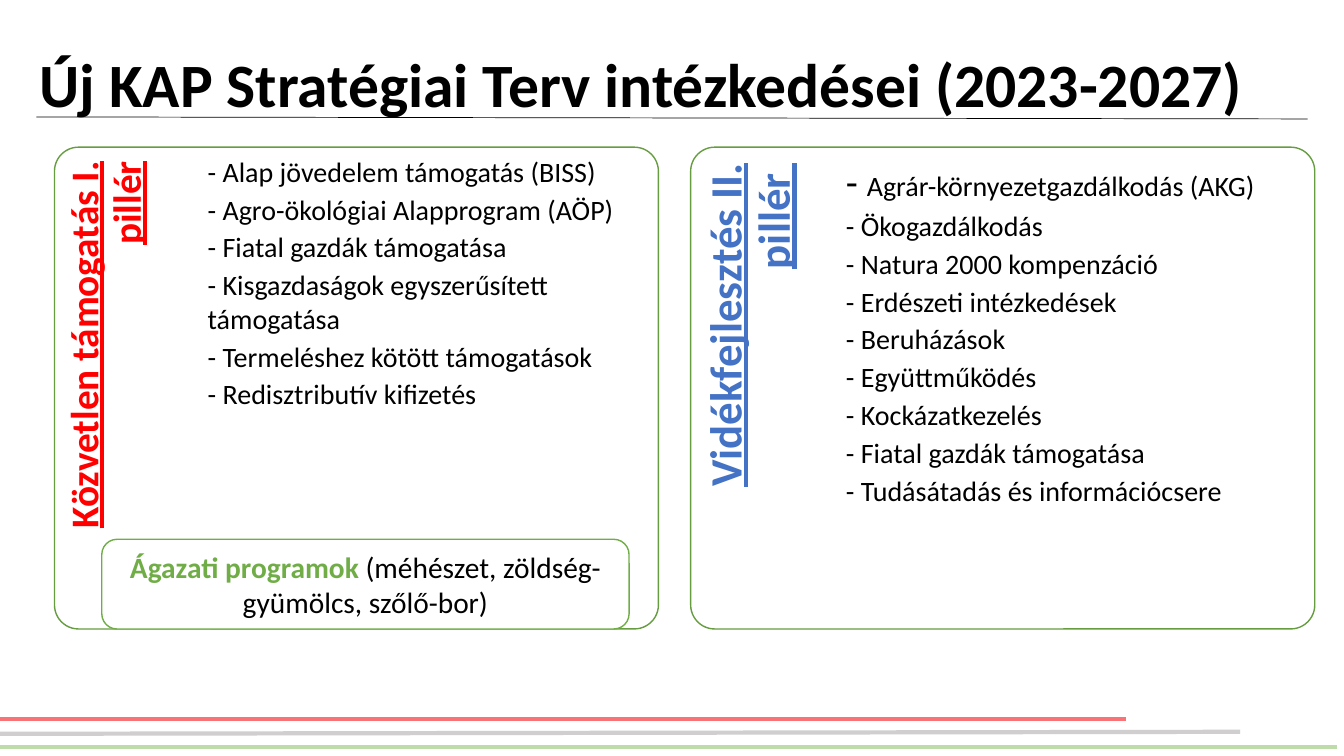
from dataclasses import dataclass

from lxml import etree
from pptx import Presentation
from pptx.dml.color import RGBColor
from pptx.enum.shapes import MSO_CONNECTOR, MSO_SHAPE
from pptx.enum.text import MSO_ANCHOR, PP_ALIGN
from pptx.oxml.ns import qn
from pptx.util import Inches, Pt

STRAIGHT = MSO_CONNECTOR.STRAIGHT
ROUNDED = MSO_SHAPE.ROUNDED_RECTANGLE
TOP, MIDDLE = MSO_ANCHOR.TOP, MSO_ANCHOR.MIDDLE
LEFT, CENTER, RIGHT = PP_ALIGN.LEFT, PP_ALIGN.CENTER, PP_ALIGN.RIGHT


@dataclass(frozen=True)
class Theme:
    font: str = "Calibri"
    black: str = "000000"
    white: str = "FFFFFF"
    red: str = "FF0000"
    blue: str = "4472C4"
    green: str = "70AD47"
    card_line: str = "669D40"
    footer_red: str = "F97376"
    footer_green: str = "BEDCAA"
    footer_gray: str = "D0CECE"
    title_size: int = 44
    body_size: int = 20
    dash_size: int = 28
    program_size: int = 21
    direct_label_size: int = 28
    rural_label_size: int = 32


class SlideBuilder:
    """Draws styled elements on one slide."""

    def __init__(self, slide, theme):
        self.slide = slide
        self.theme = theme

    def run(self, text, size, color=None, **extra):
        return text, {"size": Pt(size), "color": color or self.theme.black, "bold": False, **extra}

    def fill_text(self, shape, paragraphs, insets=(0.1, 0.05, 0.1, 0.05), anchor=TOP, **paragraph_format):
        frame = shape.text_frame
        sides = ("margin_left", "margin_top", "margin_right", "margin_bottom")
        frame_format = dict(zip(sides, map(Inches, insets)))
        frame_format.update(word_wrap=True, vertical_anchor=anchor)
        for name, value in frame_format.items():
            setattr(frame, name, value)
        for index, runs in enumerate(paragraphs):
            paragraph = frame.add_paragraph() if index else frame.paragraphs[0]
            for name, value in paragraph_format.items():
                setattr(paragraph, name, value)
            for text, run_format in runs:
                run = paragraph.add_run()
                run.text = text
                run.font.name = self.theme.font
                for name, value in run_format.items():
                    if name == "color":
                        run.font.color.rgb = RGBColor.from_string(value)
                    else:
                        setattr(run.font, name, value)

    def title(self, text, box):
        shape = self.slide.shapes.title
        for name, value in zip(("left", "top", "width", "height"), box):
            setattr(shape, name, Inches(value))
        run = self.run(text, self.theme.title_size, bold=True)
        self.fill_text(shape, [[run]], anchor=MIDDLE, alignment=LEFT, line_spacing=0.9)

    def line(self, start, end, color, width):
        connector = self.slide.shapes.add_connector(STRAIGHT, *map(Inches, start + end))
        connector.line.color.rgb = RGBColor.from_string(color)
        connector.line.width = Pt(width)
        etree.SubElement(connector._element.spPr, qn("a:effectLst"))

    def card(self, box, color, corner):
        shape = self.slide.shapes.add_shape(ROUNDED, *map(Inches, box))
        shape.adjustments[0] = corner
        shape.shadow.inherit = False
        shape.fill.solid()
        shape.fill.fore_color.rgb = RGBColor.from_string(self.theme.white)
        shape.line.color.rgb = RGBColor.from_string(color)
        shape.line.width = Pt(1)
        return shape

    def text(self, box, paragraphs, insets, rotation=0, **paragraph_format):
        shape = self.slide.shapes.add_textbox(*map(Inches, box))
        shape.rotation = rotation
        self.fill_text(shape, paragraphs, insets, **paragraph_format)

    def pillar(self, card_box, label_box, label_run, label_insets, list_box, measures, list_inset):
        self.card(card_box, self.theme.card_line, 0.05)
        self.text(label_box, [[label_run]], label_insets, 270, alignment=RIGHT, line_spacing=0.9)
        self.text(list_box, measures, (0, list_inset, 0, 0), alignment=LEFT, space_after=Pt(3))


def main():
    theme = Theme()
    presentation = Presentation()
    presentation.slide_width = Inches(13.33)
    presentation.slide_height = Inches(7.5)
    slide = presentation.slides.add_slide(presentation.slide_layouts[5])
    builder = SlideBuilder(slide, theme)

    for start, end, color, width in (
        ((0, 7.13), (11.17, 7.13), theme.footer_red, 3),
        ((0, 7.41), (13.26, 7.41), theme.footer_green, 3),
        ((0, 7.28), (12.3, 7.26), theme.footer_gray, 3),
        ((0.36, 1.16), (12.97, 1.18), theme.black, 0.5),
    ):
        builder.line(start, end, color, width)

    builder.title("Új KAP Stratégiai Terv intézkedései (2023-2027)", (0.29, 0.14, 12.75, 1.45))

    direct_measures = [
        [builder.run("- " + name, theme.body_size)]
        for name in (
            "Alap jövedelem támogatás (BISS)",
            "Agro-ökológiai Alapprogram (AÖP)",
            "Fiatal gazdák támogatása",
            "Kisgazdaságok egyszerűsített támogatása",
            "Termeléshez kötött támogatások",
            "Redisztributív kifizetés",
        )
    ]
    rural_measures = [
        [
            builder.run("- ", theme.dash_size),
            builder.run("Agrár-környezetgazdálkodás (AKG)", theme.body_size),
        ]
    ] + [
        [builder.run("- " + name, theme.body_size)]
        for name in (
            "Ökogazdálkodás",
            "Natura 2000 kompenzáció",
            "Erdészeti intézkedések",
            "Beruházások",
            "Együttműködés",
            "Kockázatkezelés",
            "Fiatal gazdák támogatása",
            "Tudásátadás és információcsere",
        )
    ]

    label_style = {"bold": True, "underline": True}
    builder.pillar(
        (0.54, 1.46, 5.99, 4.78),
        (-0.82, 2.82, 3.92, 1.2),
        builder.run("Közvetlen támogatás I. pillér", theme.direct_label_size, theme.red, **label_style),
        (0, 0.1, 0.14, 0),
        (2.06, 1.46, 4.46, 4.78),
        direct_measures,
        0.07,
    )
    builder.pillar(
        (6.85, 1.46, 6.19, 4.78),
        (5.51, 2.8, 3.92, 1.24),
        builder.run("Vidékfejlesztés II. pillér ", theme.rural_label_size, theme.blue, **label_style),
        (0, 0.12, 0.16, 0),
        (8.39, 1.46, 4.61, 4.78),
        rural_measures,
        0.1,
    )

    programs = builder.card((1.01, 5.35, 5.23, 0.89), theme.green, 0.17)
    program_runs = [
        builder.run("Ágazati programok ", theme.program_size, theme.green, bold=True),
        builder.run("(méhészet, zöldség-gyümölcs, szőlő-bor)", theme.program_size),
    ]
    builder.fill_text(programs, [program_runs], anchor=MIDDLE, alignment=CENTER)

    presentation.save("out.pptx")


if __name__ == "__main__":
    main()
